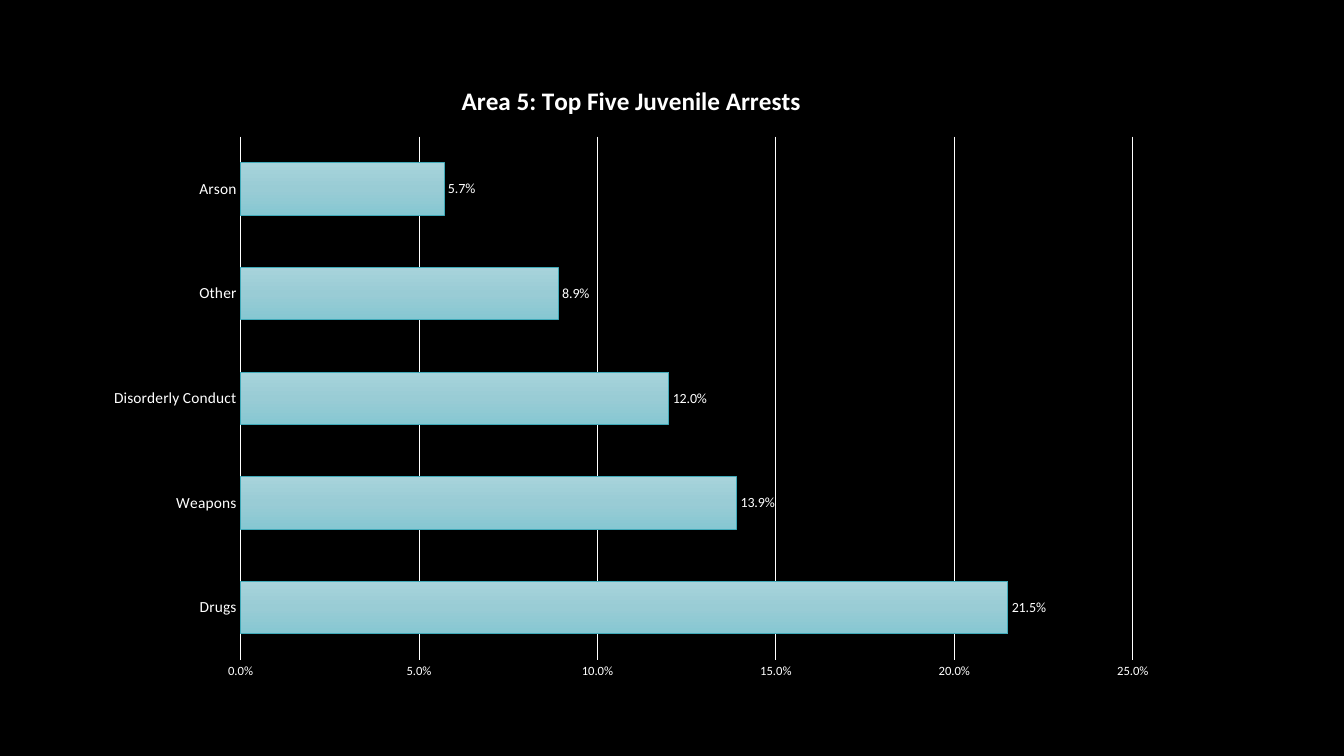
from copy import deepcopy
from typing import NamedTuple

from pptx import Presentation
from pptx.chart.data import CategoryChartData
from pptx.dml.color import RGBColor
from pptx.enum.chart import XL_CHART_TYPE as ChartType
from pptx.enum.chart import XL_LABEL_POSITION as LabelPosition
from pptx.enum.chart import XL_TICK_MARK as TickMark
from pptx.oxml.ns import qn
from pptx.util import Inches, Pt

WIDTH, HEIGHT = Inches(13.33), Inches(7.5)
COLUMNS, ROWS = 160, 90
WHITE = "FFFFFF"
PERCENT = "0.0%"


class Arrest(NamedTuple):
    offense: str
    share: float


class GradientStop(NamedTuple):
    position: float
    color: str


ARRESTS = [
    Arrest("Drugs", 0.215),
    Arrest("Weapons", 0.139),
    Arrest("Disorderly Conduct", 0.12),
    Arrest("Other", 0.089),
    Arrest("Arson", 0.057),
]
BAR_STOPS = [
    GradientStop(0, "A7D3DB"),
    GradientStop(0.5, "99CCD5"),
    GradientStop(1, "86C7D2"),
]


def color(value: str) -> RGBColor:
    return RGBColor.from_string(value)


def column(count: float) -> int:
    return round(WIDTH * count / COLUMNS)


def row(count: float) -> int:
    return round(HEIGHT * count / ROWS)


def format_font(font, size: float, bold: bool = False) -> None:
    font.name = "Calibri"
    font.size = Pt(size)
    font.bold = bold
    font.color.rgb = color(WHITE)


def write_text(text_frame, text: str, **font_format) -> None:
    paragraph = text_frame.paragraphs[0]
    run = paragraph.add_run()
    run.text = text
    format_font(run.font, **font_format)


def format_line(line, value: str) -> None:
    line.color.rgb = color(value)
    line.width = Pt(0.75)


def fill_gradient(fill, element, stops: list[GradientStop]) -> None:
    fill.gradient()
    fill.gradient_angle = 270
    stop_list = next(element.iter(qn("a:gsLst")))
    while len(stop_list) < len(stops):
        stop_list.append(deepcopy(stop_list[0]))
    for gradient_stop, stop in zip(fill.gradient_stops, stops):
        gradient_stop.position = stop.position
        gradient_stop.color.rgb = color(stop.color)


def format_axes(chart) -> None:
    for axis, size in ((chart.category_axis, 11), (chart.value_axis, 9)):
        axis.major_tick_mark = TickMark.NONE
        axis.minor_tick_mark = TickMark.NONE
        format_font(axis.tick_labels.font, size)
    format_line(chart.category_axis.format.line, WHITE)
    value_axis = chart.value_axis
    value_axis.format.line.fill.background()
    value_axis.minimum_scale, value_axis.maximum_scale = 0, 0.25
    value_axis.major_unit = 0.05
    value_axis.has_major_gridlines = True
    format_line(value_axis.major_gridlines.format.line, WHITE)
    value_axis.tick_labels.number_format = PERCENT
    value_axis.tick_labels.number_format_is_linked = False


def format_bars(plot) -> None:
    plot.gap_width = 100
    plot.vary_by_categories = False
    series = plot.series[0]
    fill_gradient(series.format.fill, series._element, BAR_STOPS)
    format_line(series.format.line, "40AAB9")
    labels = series.data_labels
    labels.show_value = True
    labels.position = LabelPosition.OUTSIDE_END
    labels.number_format = PERCENT
    labels.number_format_is_linked = False
    format_font(labels.font, 10)


def add_arrest_chart(slide) -> None:
    data = CategoryChartData(number_format=PERCENT)
    data.categories = [arrest.offense for arrest in ARRESTS]
    data.add_series("Series 1", [arrest.share for arrest in ARRESTS])
    chart = slide.shapes.add_chart(
        ChartType.BAR_CLUSTERED, column(11), row(7.2), column(128.3), row(75.1), data
    ).chart
    format_font(chart.font, 10)
    chart.has_legend = False
    chart.has_title = True
    chart.chart_title.include_in_layout = False
    write_text(
        chart.chart_title.text_frame,
        "Area 5: Top Five Juvenile Arrests",
        size=18,
        bold=True,
    )
    format_axes(chart)
    format_bars(chart.plots[0])


def main() -> None:
    presentation = Presentation()
    presentation.slide_width, presentation.slide_height = WIDTH, HEIGHT
    slide = presentation.slides.add_slide(presentation.slide_layouts[6])
    slide.background.fill.solid()
    slide.background.fill.fore_color.rgb = color("000000")
    add_arrest_chart(slide)
    presentation.save("out.pptx")


if __name__ == "__main__":
    main()
